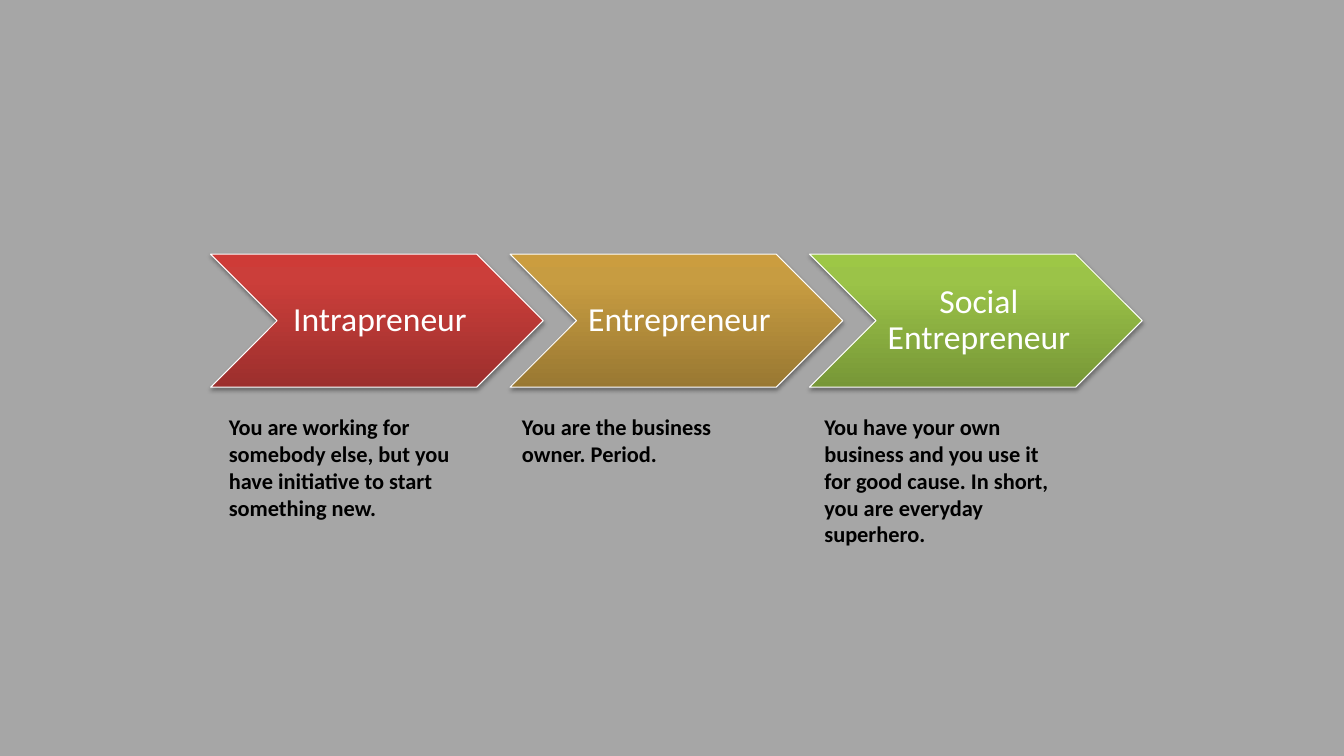
"""Build a three-step chevron slide from intrapreneur to social entrepreneur."""
from copy import deepcopy
from dataclasses import dataclass

from lxml.etree import SubElement
from pptx import Presentation
from pptx.dml.color import RGBColor
from pptx.enum.shapes import MSO_SHAPE
from pptx.enum.text import MSO_ANCHOR, MSO_AUTO_SIZE, PP_ALIGN
from pptx.oxml.ns import qn
from pptx.shapes.autoshape import Shape
from pptx.shapes.shapetree import GroupShapes, SlideShapes
from pptx.text.text import _Paragraph
from pptx.util import Inches, Length, Pt

FONT = "Calibri"
CELL = 0.33
LEFT, TOP = 6.33, 7.64
CHEVRON_COLS, CHEVRON_ROWS, PITCH, NOTCH = 10, 4, 9, 2
CAPTION_TOP, CAPTION_COLS = 12.27, 7.58


@dataclass(frozen=True)
class Step:
    label: str
    gradient: tuple[str, str, str]
    caption: str
    caption_col: float
    caption_rows: float


STEPS = [
    Step("Intrapreneur", ("9C2F2D", "CB3E3A", "CE3B37"),
         "You are working for somebody else, but you have initiative to start something new.",
         6.58, 3.58),
    Step("Entrepreneur", ("997832", "C79C41", "CB9D3F"),
         "You are the business owner. Period.", 15.39, 1.94),
    Step("Social Entrepreneur", ("779737", "9BC348", "9DC746"),
         "You have your own business and you use it for good cause. "
         "In short, you are everyday superhero.", 24.48, 4.39),
]


def cells(count: float) -> Length:
    return Inches(count * CELL)


def color(value: str) -> RGBColor:
    return RGBColor.from_string(value)


def set_gradient(sp: Shape, colors: tuple[str, str, str]) -> None:
    sp.fill.gradient()
    sp.fill.gradient_angle = 90
    stops = sp._element.spPr.find(qn("a:gradFill")).find(qn("a:gsLst"))
    stops.insert(1, deepcopy(stops[0]))
    for stop, position, value in zip(sp.fill.gradient_stops, (0, 0.8, 1), colors):
        stop.position = position
        stop.color.rgb = color(value)


def set_shadow(sp: Shape) -> None:
    sp.shadow.inherit = False
    effects = sp._element.spPr.find(qn("a:effectLst"))
    shadow = SubElement(effects, qn("a:outerShdw"), blurRad=str(Pt(3.1)),
                        dist=str(Pt(1.8)), dir="5400000", rotWithShape="0")
    black = SubElement(shadow, qn("a:srgbClr"), val="000000")
    SubElement(black, qn("a:alpha"), val="35000")


def add_text(shapes: SlideShapes | GroupShapes, box: tuple[float, float, float, float],
             text: str, size: float, value: str, bold: bool = False) -> Shape:
    sp = shapes.add_textbox(*map(cells, box))
    tf = sp.text_frame
    tf.word_wrap = True
    tf.text = text
    font = tf.paragraphs[0].runs[0].font
    font.name, font.size, font.bold = FONT, Pt(size), bold
    font.color.rgb = color(value)
    return sp


def set_label_spacing(p: _Paragraph) -> None:
    p.alignment = PP_ALIGN.CENTER
    p.line_spacing = 0.9
    after = SubElement(p._p.get_or_add_pPr(), qn("a:spcAft"))
    SubElement(after, qn("a:spcPct"), val="35000")


def add_chevron(shapes: GroupShapes, step: Step, col: float) -> None:
    sp = shapes.add_shape(MSO_SHAPE.CHEVRON, cells(col), cells(TOP),
                          cells(CHEVRON_COLS), cells(CHEVRON_ROWS))
    set_gradient(sp, step.gradient)
    sp.line.color.rgb = color("FFFFFF")
    sp.line.width = Pt(0.75)
    set_shadow(sp)
    box = (col + NOTCH, TOP, CHEVRON_COLS - 2 * NOTCH, CHEVRON_ROWS)
    tf = add_text(shapes, box, step.label, 24, "FFFFFF").text_frame
    tf.vertical_anchor = MSO_ANCHOR.MIDDLE
    tf.margin_left = Inches(0.1)
    tf.margin_top = tf.margin_right = tf.margin_bottom = Inches(0.04)
    set_label_spacing(tf.paragraphs[0])


def add_caption(shapes: SlideShapes, step: Step) -> None:
    box = (step.caption_col, CAPTION_TOP, CAPTION_COLS, step.caption_rows)
    sp = add_text(shapes, box, step.caption, 16, "000000", bold=True)
    sp.text_frame.auto_size = MSO_AUTO_SIZE.SHAPE_TO_FIT_TEXT


def main() -> None:
    prs = Presentation()
    prs.slide_width, prs.slide_height = Inches(13.33), Inches(7.5)
    s = prs.slides.add_slide(prs.slide_layouts[6])
    s.background.fill.solid()
    s.background.fill.fore_color.rgb = color("A6A6A6")
    group = s.shapes.add_group_shape()
    for i, step in enumerate(STEPS):
        add_chevron(group.shapes, step, LEFT + i * PITCH)
    for step in STEPS:
        add_caption(s.shapes, step)
    prs.save("out.pptx")


if __name__ == "__main__":
    main()
